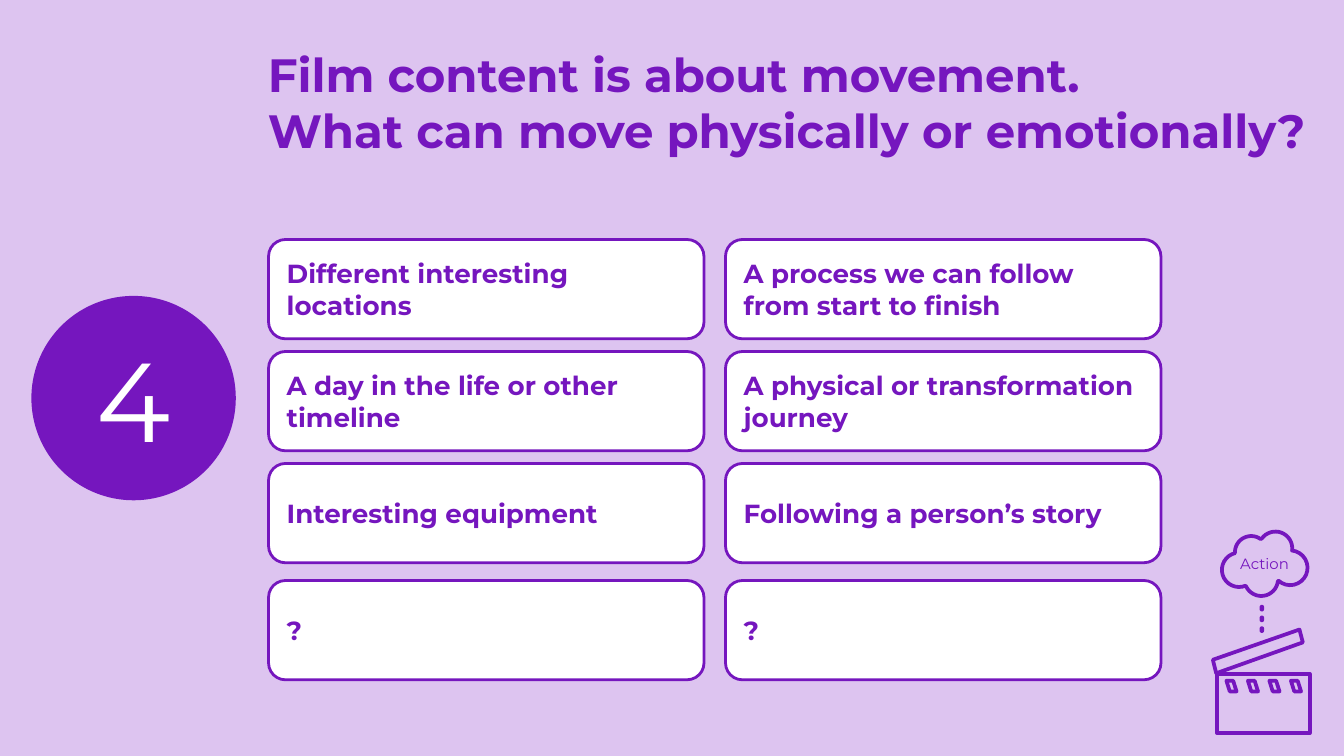
from math import cos, radians, sin

from pptx import Presentation
from pptx.dml.color import RGBColor
from pptx.enum.shapes import MSO_SHAPE
from pptx.enum.text import MSO_ANCHOR, PP_ALIGN
from pptx.util import Pt

PURPLE = RGBColor(0x75, 0x16, 0xBE)
LILAC = RGBColor(0xDD, 0xC4, 0xF0)
WHITE = RGBColor(0xFF, 0xFF, 0xFF)
OVAL, RECTANGLE, ROUNDED = MSO_SHAPE.OVAL, MSO_SHAPE.RECTANGLE, MSO_SHAPE.ROUNDED_RECTANGLE
TOP, MIDDLE = MSO_ANCHOR.TOP, MSO_ANCHOR.MIDDLE
LEFT, CENTER = PP_ALIGN.LEFT, PP_ALIGN.CENTER


def style_shape(shape, fill=None, line_width=None):
    """Give a flat fill and a purple outline; None means no fill or no line."""
    shape.shadow.inherit = False
    if fill is None:
        shape.fill.background()
    else:
        shape.fill.solid()
        shape.fill.fore_color.rgb = fill
    if line_width is None:
        shape.line.fill.background()
    else:
        shape.line.color.rgb = PURPLE
        shape.line.width = Pt(line_width)


def write_text(shape, text, size, color=PURPLE, bold=True, align=LEFT, anchor=MIDDLE, margin=7.2):
    frame = shape.text_frame
    frame_format = {"word_wrap": True, "vertical_anchor": anchor}
    for side in ("left", "top", "right", "bottom"):
        frame_format[f"margin_{side}"] = Pt(margin)
    for name, value in frame_format.items():
        setattr(frame, name, value)
    paragraph = frame.paragraphs[0]
    paragraph.text = text
    paragraph.alignment = align
    for run in paragraph.runs:
        for name, value in {"name": "Montserrat", "size": Pt(size), "bold": bold}.items():
            setattr(run.font, name, value)
        run.font.color.rgb = color


presentation = Presentation()
presentation.slide_width, presentation.slide_height = Pt(720), Pt(405)
slide = presentation.slides.add_slide(presentation.slide_layouts[6])
slide.background.fill.solid()
slide.background.fill.fore_color.rgb = LILAC
shapes = slide.shapes

# Number and title
number = shapes.add_shape(OVAL, Pt(16.8), Pt(158.5), Pt(109.5), Pt(109.5))
style_shape(number, PURPLE)
write_text(number, "4", 60, WHITE, bold=False, align=CENTER)

title = shapes.add_textbox(Pt(143.5), Pt(24.5), Pt(559.5), Pt(47.5))
write_text(
    title,
    "Film content is about movement.\vWhat can move physically or emotionally?",
    25, anchor=TOP, margin=0,
)

# Clapperboard: body, arm and slanted slots
body = shapes.add_shape(RECTANGLE, Pt(652), Pt(361.1), Pt(49.7), Pt(31.7))
style_shape(body, line_width=2)

arm = [(696.2, 337.3), (698, 344.2), (651.6, 360.7), (649.8, 353.5)]
slot = [(657, 364.7), (660.6, 364.7), (662.4, 370.4), (658.8, 370.4)]
slots = [[(x + 11.52 * i, y) for x, y in slot] for i in range(4)]

# Speech cloud: centre x, centre y, radius, start and end angle of each lobe
cloud_lobes = [
    (663.8, 305.3, 9.2, 68, 257),
    (670.3, 295.9, 8.7, 180, 305),
    (683.3, 293.8, 9, 216, 365),
    (691.2, 304.2, 9.3, 276, 492),
    (675.7, 310.3, 9, 7, 154),
]
LOBE_STEPS = 16
cloud = []
for center_x, center_y, radius, start, end in cloud_lobes:
    for step in range(LOBE_STEPS + 1):
        angle = radians(start + (end - start) * step / LOBE_STEPS)
        cloud.append((center_x + radius * cos(angle), center_y + radius * sin(angle)))

for outline in [arm, *slots, cloud]:
    points = [(Pt(x), Pt(y)) for x, y in outline]
    builder = shapes.build_freeform(*points[0])
    builder.add_line_segments(points[1:], close=True)
    style_shape(builder.convert_to_shape(), line_width=2)

action = shapes.add_textbox(Pt(657), Pt(295), Pt(41), Pt(14))
write_text(action, "Action", 8, bold=False, align=CENTER, margin=0)

for i in range(3):
    dash = shapes.add_shape(ROUNDED, Pt(674.8), Pt(324 + 5.75 * i), Pt(2.4), Pt(3.6))
    dash.adjustments[0] = 0.5
    style_shape(dash, PURPLE)

# Idea cards
COLUMN_LEFTS = (143.9, 388.7)
card_rows = [
    (128.3, ("Different interesting locations", "A process we can follow\vfrom start to finish")),
    (188.3, ("A day in the life or other timeline", "A physical or transformation journey")),
    (248.3, ("Interesting equipment", "Following a person’s story")),
    (311, ("?", "?")),
]
for top, ideas in card_rows:
    for left, idea in zip(COLUMN_LEFTS, ideas):
        card = shapes.add_shape(ROUNDED, Pt(left), Pt(top), Pt(233.3), Pt(53.2))
        card.adjustments[0] = 0.17
        style_shape(card, WHITE, 1.5)
        write_text(card, idea, 14)

presentation.save("out.pptx")
